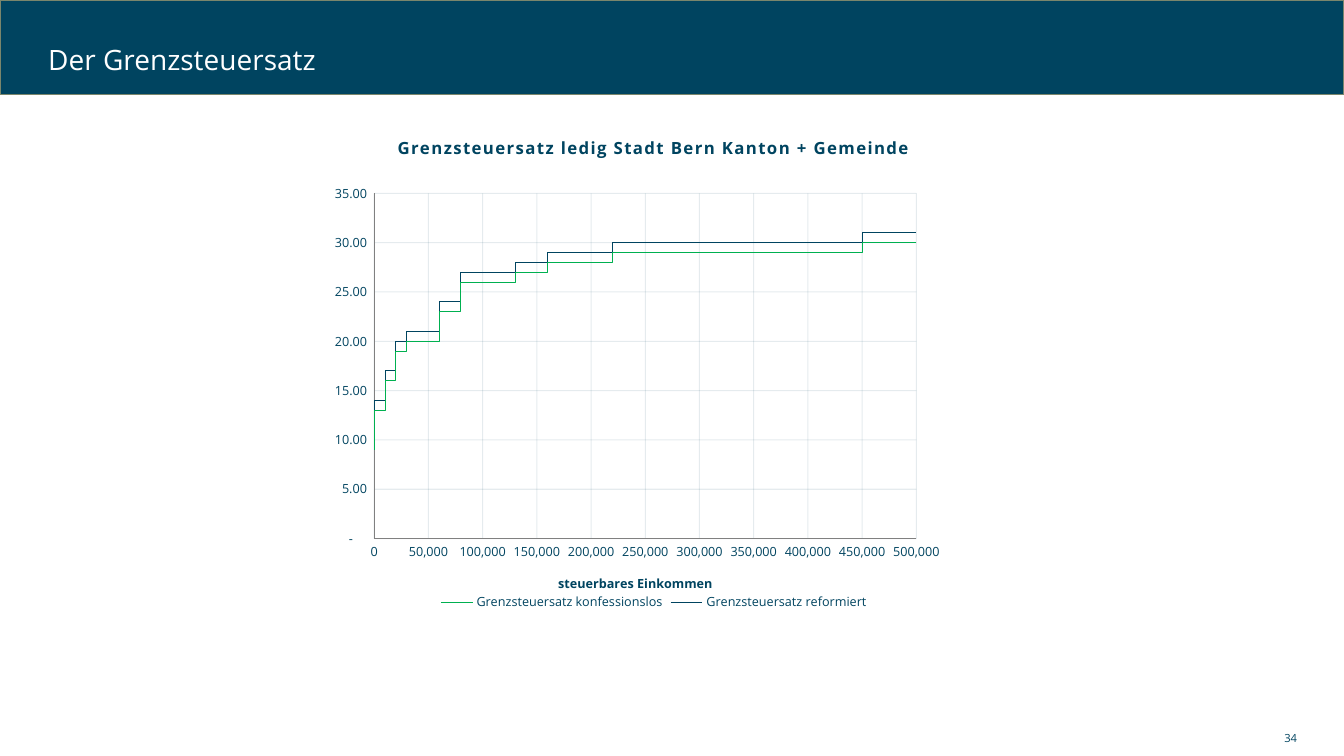
from itertools import chain

from lxml.etree import SubElement
from pptx import Presentation
from pptx.chart.data import XyChartData
from pptx.dml.color import RGBColor
from pptx.enum.chart import XL_CHART_TYPE, XL_LEGEND_POSITION, XL_TICK_MARK
from pptx.enum.shapes import MSO_SHAPE
from pptx.enum.text import MSO_ANCHOR, PP_ALIGN
from pptx.oxml import parse_xml
from pptx.oxml.ns import nsdecls, qn
from pptx.util import Pt

FONT = "Open Sans"
NAVY, WHITE, GREEN, GREY, OLIVE = "004460", "FFFFFF", "00B050", "808080", "7A866C"

BRACKETS = [0, 0, 10000, 20000, 30000, 60000, 80000, 110000, 130000,
            160000, 190000, 220000, 300000, 450000, 1000000]
RATES = {
    "Grenzsteuersatz konfessionslos": (GREEN, [
        9, 13, 16, 19, 20, 23, 26, 26, 27, 28, 28, 29, 29, 30]),
    "Grenzsteuersatz reformiert": (NAVY, [
        9, 14, 17, 20, 21, 24, 27, 27, 28, 29, 29, 30, 30, 31]),
}


def color(value):
    """Return the colour for a hex string."""
    return RGBColor.from_string(value)


def apply(target, values):
    """Set every attribute in values on target."""
    for name, value in values.items():
        setattr(target, name, value)


def style_font(font, size, hex_color, bold=False):
    """Give a font its face, size, weight and colour."""
    apply(font, {"name": FONT, "size": Pt(size), "bold": bold})
    font.color.rgb = color(hex_color)


def style_line(line, hex_color, width=0.75):
    """Give a line its colour and width."""
    line.color.rgb = color(hex_color)
    line.width = Pt(width)


def add_text(slide, box, text, size, hex_color, alignment=PP_ALIGN.LEFT, spacing=1.0):
    """Place one line of vertically centred text in box."""
    frame = slide.shapes.add_textbox(*map(Pt, box)).text_frame
    apply(frame, {"word_wrap": True, "vertical_anchor": MSO_ANCHOR.MIDDLE,
                  "margin_top": 0, "margin_bottom": 0})
    paragraph = frame.paragraphs[0]
    apply(paragraph, {"text": text, "alignment": alignment, "line_spacing": spacing})
    style_font(paragraph.runs[0].font, size, hex_color)


def add_header(slide, box, title):
    """Draw the title band across box."""
    left, top, width, height = box
    band = slide.shapes.add_shape(MSO_SHAPE.RECTANGLE, *map(Pt, box))
    band.shadow.inherit = False
    band.fill.solid()
    band.fill.fore_color.rgb = color(NAVY)
    style_line(band.line, OLIVE, 1)
    add_text(slide, (left + 27.3, top + 24.2, width - 166, height - 28.7),
             title, 20, WHITE, spacing=0.9)


def set_layout(element, index, position, target=None):
    """Fix a chart part at fractions of the chart area."""
    old = element.find(qn("c:layout"))
    if old is not None:
        element.remove(old)
    layout = parse_xml(f"<c:layout {nsdecls('c')}/>")
    element.insert(index, layout)
    manual = SubElement(layout, qn("c:manualLayout"))
    values = {"layoutTarget": target} if target else {}
    values.update({"xMode": "edge", "yMode": "edge"})
    values.update(zip("xywh", map(str, position)))
    for name, value in values.items():
        SubElement(manual, qn(f"c:{name}")).set("val", value)


def set_title(title, text, size, position):
    """Write a bold chart or axis title at position."""
    paragraph = title.text_frame.paragraphs[0]
    paragraph.text = text
    style_font(paragraph.runs[0].font, size, NAVY, bold=True)
    set_layout(title._element, 1, position)
    return paragraph.runs[0]


def style_axis(axis, maximum, step, number_format):
    """Set the scale, labels, line and grid of an axis."""
    apply(axis, {"minimum_scale": 0, "maximum_scale": maximum, "major_unit": step,
                 "major_tick_mark": XL_TICK_MARK.NONE, "minor_tick_mark": XL_TICK_MARK.NONE,
                 "has_major_gridlines": True})
    apply(axis.tick_labels, {"number_format": number_format, "number_format_is_linked": False})
    style_font(axis.tick_labels.font, 9, NAVY)
    style_line(axis.format.line, GREY)
    style_line(axis.major_gridlines.format.line, NAVY)


def white_fill():
    """Return white shape properties for a chart part."""
    return parse_xml(f'<c:spPr {nsdecls("c", "a")}><a:solidFill><a:srgbClr val="{WHITE}"/>'
                     "</a:solidFill><a:ln><a:noFill/></a:ln></c:spPr>")


def add_rate_chart(slide, box):
    """Draw the stepped marginal tax rates in box."""
    data = XyChartData()
    for name, (_, rates) in RATES.items():
        series = data.add_series(name)
        steps = zip(BRACKETS, BRACKETS[1:], rates)
        for income, rate in chain.from_iterable(((a, r), (b, r)) for a, b, r in steps):
            series.add_data_point(income, rate)
    chart = slide.shapes.add_chart(
        XL_CHART_TYPE.XY_SCATTER_LINES_NO_MARKERS, *map(Pt, box), data).chart
    style_font(chart.font, 10, NAVY)
    apply(chart, {"has_title": True, "has_legend": True})
    heading = set_title(chart.chart_title, "Grenzsteuersatz ledig Stadt Bern Kanton + Gemeinde",
                        12, (0.142, 0.032))
    heading.font._element.set("spc", "100")
    apply(chart.legend, {"position": XL_LEGEND_POSITION.BOTTOM, "include_in_layout": False})
    style_font(chart.legend.font, 9, NAVY)

    style_axis(chart.category_axis, 500000, 50000, "#,##0")
    style_axis(chart.value_axis, 35, 5, '#,##0.00_ ;-#,##0.00_ ;"-"??_ ')
    set_title(chart.category_axis.axis_title, "steuerbares Einkommen", 9, (0.365, 0.911))

    chart.plots[0].vary_by_categories = False
    for series in chart.plots[0].series:
        series.smooth = False
        style_line(series.format.line, RATES[series.name][0])

    for grid in chart.element.iter(qn("c:majorGridlines")):
        for grid_color in grid.iter(qn("a:srgbClr")):
            SubElement(grid_color, qn("a:alpha")).set("val", "10000")
    plot_area = chart.element.find(".//" + qn("c:plotArea"))
    set_layout(plot_area, 0, (0.114, 0.156, 0.749, 0.691), "inner")
    plot_area.append(white_fill())
    chart.element.find(qn("c:chart")).addnext(white_fill())


def main():
    """Build and save the slide."""
    presentation = Presentation()
    apply(presentation, {"slide_width": Pt(960), "slide_height": Pt(540)})
    slide = presentation.slides.add_slide(presentation.slide_layouts[6])
    add_header(slide, (0, 0, 960, 67.7), "Der Grenzsteuersatz")
    add_rate_chart(slide, (208.4, 82.4, 517, 357))
    add_text(slide, (678, 518.4, 255.6, 17.3), "34", 8, NAVY, PP_ALIGN.RIGHT)
    presentation.save("out.pptx")


if __name__ == "__main__":
    main()
